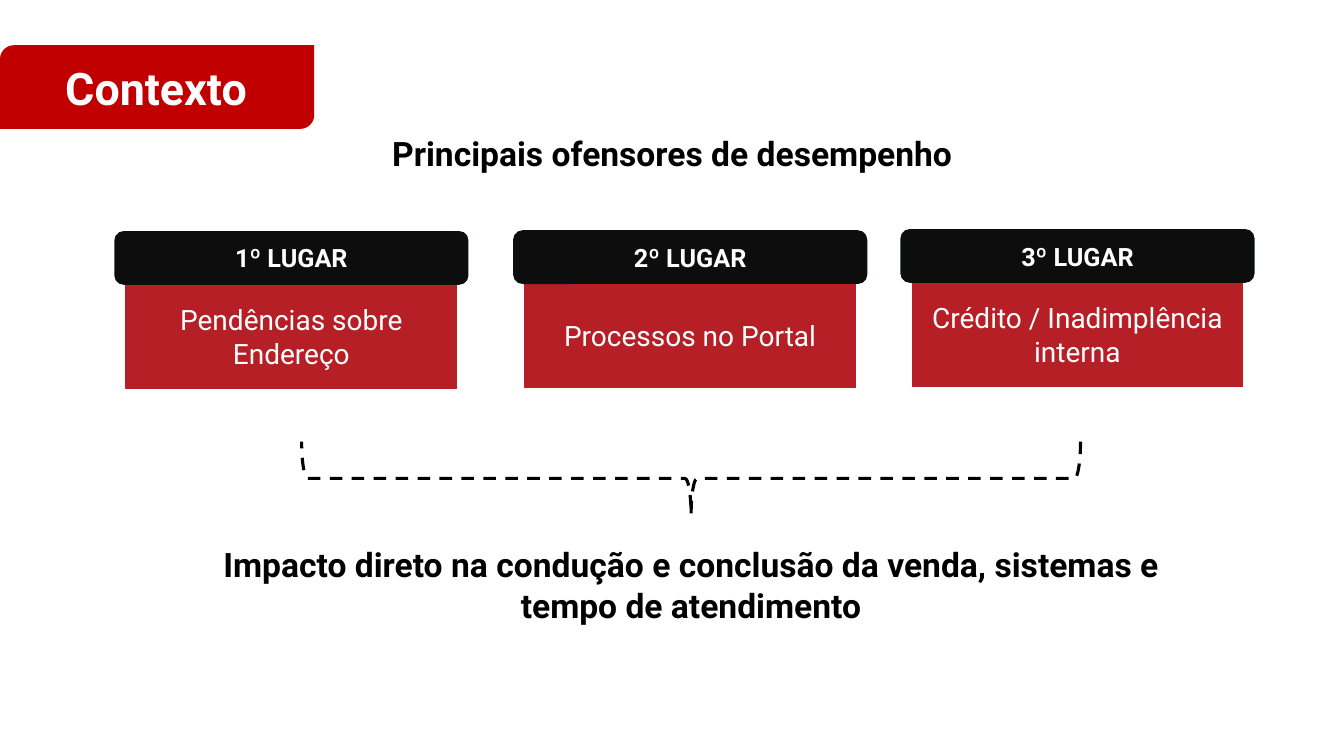
from pptx import Presentation, util as u
from pptx.dml.color import RGBColor
from pptx.enum import dml, shapes, text

KIND = shapes.MSO_SHAPE
RANKS = [
    (2.9, 5.84, "1º LUGAR", "Pendências sobre Endereço"),
    (12.95, 5.82, "2º LUGAR", "Processos no Portal"),
    (22.71, 5.79, "3º LUGAR", "Crédito / Inadimplência interna"),
]


def hue(code):
    """Turn a hex string into a colour."""
    return RGBColor.from_string(code)


def put(frame, words, size=24, color="000000", bold=True, anchor="TOP"):
    """Write centred text into a frame."""
    frame.word_wrap = True
    frame.vertical_anchor = getattr(text.MSO_ANCHOR, anchor)
    para = frame.paragraphs[0]
    para.alignment = text.PP_ALIGN.CENTER
    run = para.add_run()
    run.text = words
    font = run.font
    font.name, font.size, font.bold = "Roboto", u.Pt(size), bold
    font.color.rgb = hue(color)


def shape(slide, kind, box, fill=None, line=None, width=1):
    """Draw a flat preset shape in a box given in centimetres."""
    item = slide.shapes.add_shape(kind, *map(u.Cm, box))
    item.shadow.inherit = False
    if fill:
        item.fill.solid()
        item.fill.fore_color.rgb = hue(fill)
    else:
        item.fill.background()
    if line:
        item.line.color.rgb = hue(line)
        item.line.width = u.Pt(width)
    else:
        item.line.fill.background()
    return item


def label(slide, box, words, **style):
    """Add a text box in a box given in centimetres."""
    item = slide.shapes.add_textbox(*map(u.Cm, box))
    put(item.text_frame, words, **style)


def card(slide, left, top, rank, cause):
    """Place one ranked cause: a red body under a black header."""
    body = shape(slide, KIND.RECTANGLE, (left + 0.28, top + 1.33, 8.33, 2.62),
                 "B71F26", "B71F26")
    put(body.text_frame, cause, size=20, color="FFFFFF", bold=False,
        anchor="MIDDLE")
    head = shape(slide, KIND.ROUNDED_RECTANGLE, (left, top, 8.89, 1.32),
                 "0D0D0D", "0A100F")
    put(head.text_frame, rank, size=18, color="FFFFFF", anchor="MIDDLE")


def title(slide, left, top, words):
    """Place the red title tab."""
    shape(slide, KIND.ROUND_2_DIAG_RECTANGLE, (left, top, 7.92, 2.11),
          "C00000")
    label(slide, (left + 0.53, top + 0.26, 6.81, 1.63), words, size=32,
          color="FFFFFF")


def brace(slide, left, top, wide, high):
    """Place a dashed brace that opens upward."""
    box = (left + (wide - high) / 2, top + (high - wide) / 2, high, wide)
    item = shape(slide, KIND.RIGHT_BRACE, box, line="000000", width=2.25)
    item.rotation = 90
    item.line.dash_style = dml.MSO_LINE.DASH


def main():
    """Build and save the slide."""
    deck = Presentation()
    deck.slide_width, deck.slide_height = u.Cm(33.87), u.Cm(19.05)
    slide = deck.slides.add_slide(deck.slide_layouts[6])
    for rank in RANKS:
        card(slide, *rank)
    label(slide, (2.08, 3.23, 29.72, 1.27),
          "Principais ofensores de desempenho")
    brace(slide, 7.6, 11.13, 19.63, 1.85)
    label(slide, (4.27, 13.59, 26.29, 2.31),
          "Impacto direto na condução e conclusão da venda, sistemas e "
          "tempo de atendimento")
    title(slide, 0, 1.14, "Contexto")
    deck.save("out.pptx")


if __name__ == "__main__":
    main()
